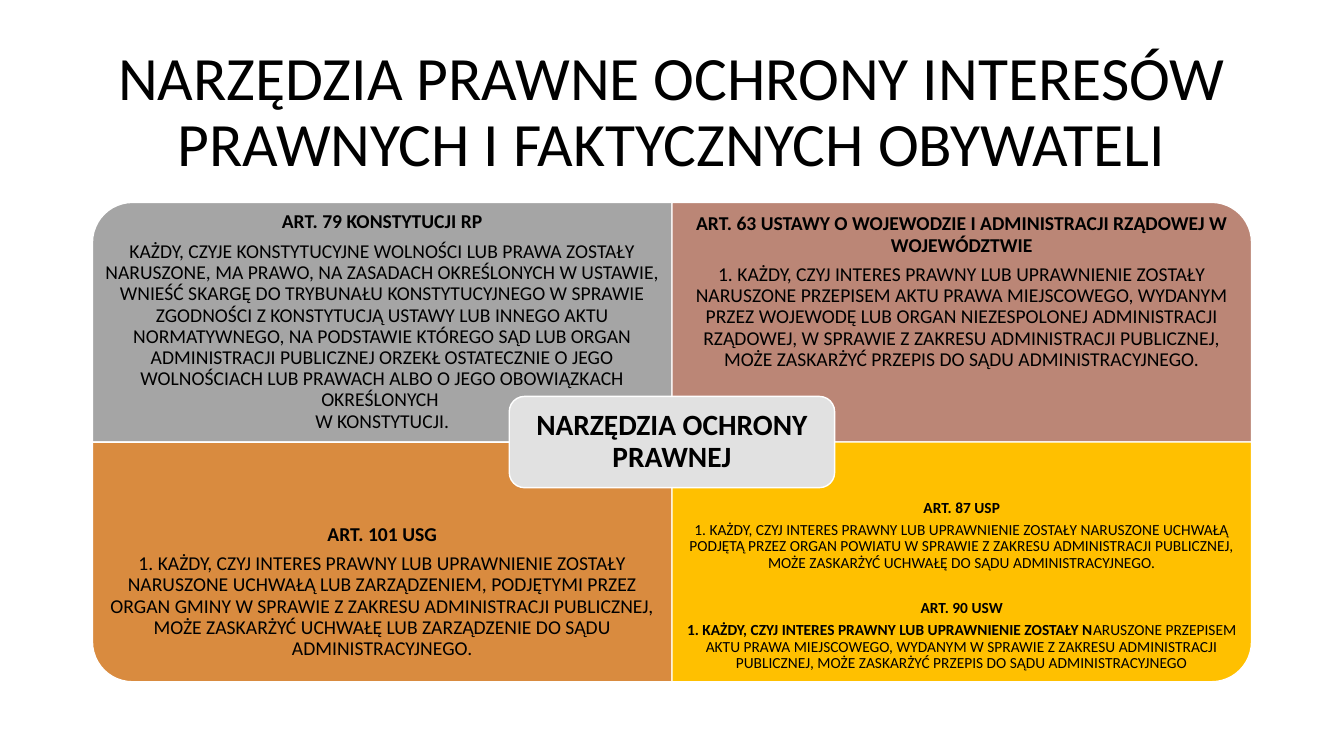
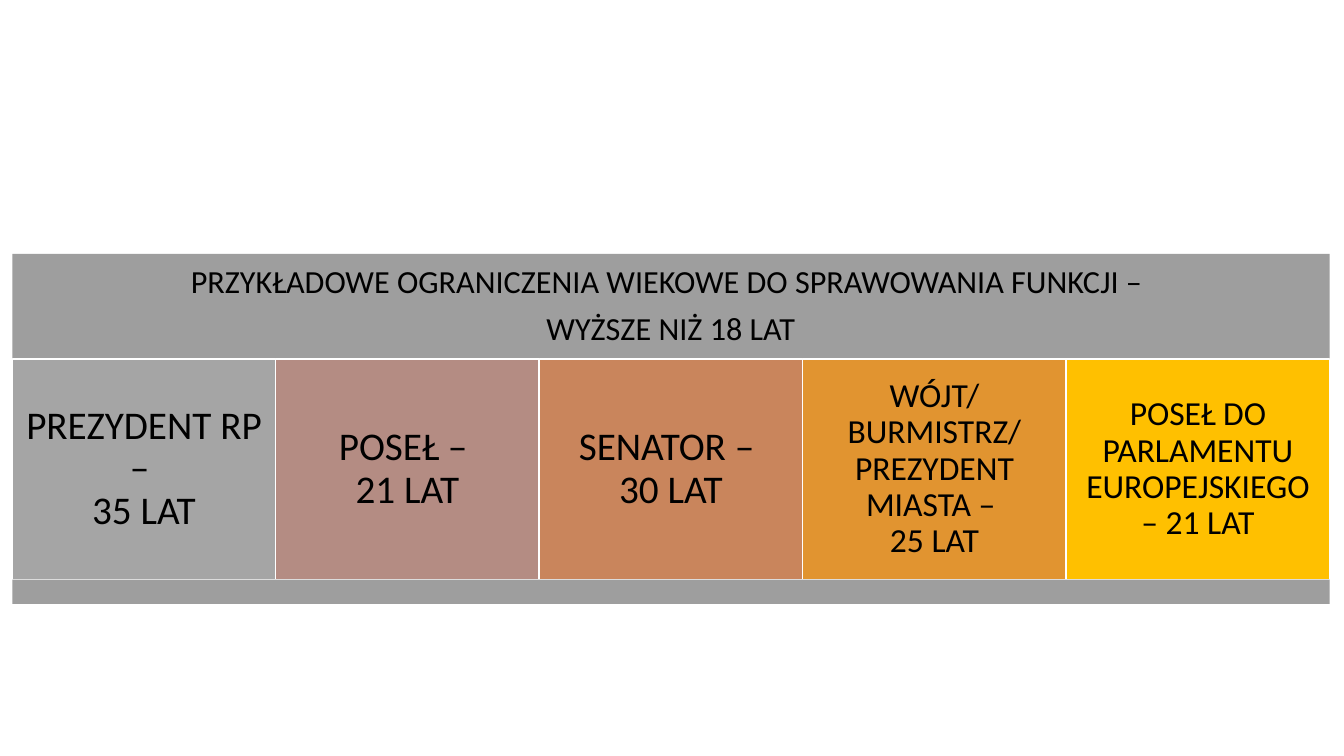
from pptx import Presentation
from pptx.dml.color import RGBColor
from pptx.enum.shapes import MSO_SHAPE
from pptx.enum.text import MSO_ANCHOR, PP_ALIGN
from pptx.util import Cm, Pt

FONT = "Calibri"
COLORS = {
    "text": "000000", "line": "FFFFFF", "band": "9E9E9E", "hub": "E1E1E1",
    "gray": "A5A5A5", "rose": "BB8676", "orange": "D98B3F", "gold": "FFC000",
    "mauve": "B48C83", "copper": "C9855C", "amber": "E19430",
}

QUADRANTS = [
    ("gray", 270, 14, 1, [
        [("ART. 79 KONSTYTUCJI RP", True)],
        [("KAŻDY, CZYJE KONSTYTUCYJNE WOLNOŚCI LUB PRAWA ZOSTAŁY NARUSZONE, MA PRAWO, "
          "NA ZASADACH OKREŚLONYCH W USTAWIE, WNIEŚĆ SKARGĘ DO TRYBUNAŁU KONSTYTUCYJNEGO "
          "W SPRAWIE ZGODNOŚCI Z KONSTYTUCJĄ USTAWY LUB INNEGO AKTU NORMATYWNEGO, "
          "NA PODSTAWIE KTÓREGO SĄD LUB ORGAN ADMINISTRACJI PUBLICZNEJ ORZEKŁ OSTATECZNIE "
          "O JEGO WOLNOŚCIACH LUB PRAWACH ALBO O JEGO OBOWIĄZKACH OKREŚLONYCH \v"
          "W KONSTYTUCJI.", False)],
    ]),
    ("rose", 0, 14, 0.75, [
        [("ART. 63 USTAWY O WOJEWODZIE I ADMINISTRACJI RZĄDOWEJ W WOJEWÓDZTWIE", True)],
        [("1. KAŻDY, CZYJ INTERES PRAWNY LUB UPRAWNIENIE ZOSTAŁY NARUSZONE PRZEPISEM AKTU "
          "PRAWA MIEJSCOWEGO, WYDANYM PRZEZ WOJEWODĘ LUB ORGAN NIEZESPOLONEJ ADMINISTRACJI "
          "RZĄDOWEJ, W SPRAWIE Z ZAKRESU ADMINISTRACJI PUBLICZNEJ, MOŻE ZASKARŻYĆ PRZEPIS "
          "DO SĄDU ADMINISTRACYJNEGO.", False)],
    ]),
    ("orange", 180, 14, 0.75, [
        [("ART. 101 USG", True)],
        [("1. KAŻDY, CZYJ INTERES PRAWNY LUB UPRAWNIENIE ZOSTAŁY NARUSZONE UCHWAŁĄ LUB "
          "ZARZĄDZENIEM, PODJĘTYMI PRZEZ ORGAN GMINY W SPRAWIE Z ZAKRESU ADMINISTRACJI "
          "PUBLICZNEJ, MOŻE ZASKARŻYĆ UCHWAŁĘ LUB ZARZĄDZENIE DO SĄDU "
          "ADMINISTRACYJNEGO.", False)],
    ]),
    ("gold", 90, 11, 0.7, [
        [("ART. 87 USP", True)],
        [("1. KAŻDY, CZYJ INTERES PRAWNY LUB UPRAWNIENIE ZOSTAŁY NARUSZONE UCHWAŁĄ PODJĘTĄ "
          "PRZEZ ORGAN POWIATU W SPRAWIE Z ZAKRESU ADMINISTRACJI PUBLICZNEJ, MOŻE ZASKARŻYĆ "
          "UCHWAŁĘ DO SĄDU ADMINISTRACYJNEGO.", False)],
        [("ART. 90 USW", True)],
        [("1. KAŻDY, CZYJ INTERES PRAWNY LUB UPRAWNIENIE ZOSTAŁY N", True),
         ("ARUSZONE PRZEPISEM AKTU PRAWA MIEJSCOWEGO, WYDANYM W SPRAWIE Z ZAKRESU "
          "ADMINISTRACJI PUBLICZNEJ, MOŻE ZASKARŻYĆ PRZEPIS DO SĄDU ADMINISTRACYJNEGO", False)],
    ]),
]

AGE_LIMITS = [
    ("gray", 28, "PREZYDENT RP – \v35 LAT"),
    ("mauve", 28, "POSEŁ – \v21 LAT"),
    ("copper", 28, "SENATOR – \v30 LAT"),
    ("amber", 24, "WÓJT/ BURMISTRZ/ PREZYDENT MIASTA – \v25 LAT"),
    ("gold", 24, "POSEŁ DO PARLAMENTU EUROPEJSKIEGO – 21 LAT"),
]


def rgb(name):
    """Return the named colour."""
    return RGBColor.from_string(COLORS[name])


def add_block(s, kind, box, fill, line=True, rotation=0):
    """Add a filled shape whose box is given as it shows after rotation."""
    x, y, w, h = box
    if rotation in (90, 270):
        x, y, w, h = x + (w - h) / 2, y + (h - w) / 2, h, w
    sp = s.shapes.add_shape(kind, Cm(x), Cm(y), Cm(w), Cm(h))
    sp.rotation = rotation
    sp.shadow.inherit = False
    sp.fill.solid()
    sp.fill.fore_color.rgb = rgb(fill)
    if line:
        sp.line.color.rgb = rgb("line")
        sp.line.width = Pt(1)
    else:
        sp.line.fill.background()
    return sp


def add_textbox(s, box):
    """Add an empty text box."""
    return s.shapes.add_textbox(*(Cm(v) for v in box))


def write(sp, paragraphs, size, inset=0.25):
    """Write centred paragraphs, each a list of (text, bold) runs."""
    tf = sp.text_frame
    tf.word_wrap = True
    tf.vertical_anchor = MSO_ANCHOR.MIDDLE
    tf.margin_left = tf.margin_right = tf.margin_top = tf.margin_bottom = Cm(inset)
    for i, runs in enumerate(paragraphs):
        p = tf.paragraphs[0] if i == 0 else tf.add_paragraph()
        p.alignment = PP_ALIGN.CENTER
        p.line_spacing = 0.9
        p.space_after = Pt(round(size * 0.4))
        p.font.name, p.font.size = FONT, Pt(size)
        p.font.color.rgb = rgb("text")
        if len(runs) == 1:
            p.text, p.font.bold = runs[0]
        else:
            for text, bold in runs:
                r = p.add_run()
                r.text, r.font.bold = text, bold
    return tf


def add_title(s, box, text):
    """Add the slide title."""
    tf = write(add_textbox(s, box), [[(text, False)]], 44)
    tf.paragraphs[0].space_after = Pt(0)


def add_matrix(s, box, quadrants, hub):
    """Add four rounded quadrants around a central label."""
    x, y, w, h = box
    cw, ch = w / 2, h / 2
    for i, (fill, rotation, size, share, paragraphs) in enumerate(quadrants):
        row, col = divmod(i, 2)
        qx, qy = x + col * cw, y + row * ch
        add_block(s, MSO_SHAPE.ROUND_1_RECTANGLE, (qx, qy, cw, ch), fill, rotation=rotation)
        label = add_textbox(s, (qx, qy + row * ch / 4, cw, ch * share))
        tf = write(label, paragraphs, size, size * 0.02)
        for p in tf.paragraphs[2::2]:
            p.space_before = Pt(16)
    hw, hh = 8.2, 2.3
    sp = add_block(s, MSO_SHAPE.ROUNDED_RECTANGLE,
                   (x + cw - hw / 2, y + ch - hh / 2, hw, hh), "hub")
    write(sp, [[(hub, True)]], 21)


def add_age_table(s, box, heading, limits):
    """Add a heading band, a row of equal tiles and a closing band."""
    x, y, w, h = box
    head, foot = h * 0.3, h * 0.07
    sp = add_block(s, MSO_SHAPE.RECTANGLE, (x, y, w, head), "band", line=False)
    write(sp, [[(text, False)] for text in heading], 23)
    tw = w / len(limits)
    for i, (fill, size, text) in enumerate(limits):
        tile = (x + i * tw, y + head, tw, h - head - foot)
        sp = add_block(s, MSO_SHAPE.RECTANGLE, tile, fill)
        write(sp, [[(text, False)]], size, size * 0.01)
    add_block(s, MSO_SHAPE.RECTANGLE, (x, y + h - foot, w, foot), "band", line=False)


def main():
    """Build and save the presentation."""
    prs = Presentation()
    prs.slide_width, prs.slide_height = Cm(33.87), Cm(19.05)
    blank = prs.slide_layouts[6]

    s = prs.slides.add_slide(blank)
    add_title(s, (2.33, 1.02, 29.21, 3.68),
              "NARZĘDZIA PRAWNE OCHRONY INTERESÓW PRAWNYCH I FAKTYCZNYCH OBYWATELI")
    add_matrix(s, (2.33, 5.1, 29.21, 12.08), QUADRANTS, "NARZĘDZIA OCHRONY PRAWNEJ")

    s = prs.slides.add_slide(blank)
    add_age_table(s, (0.31, 6.4, 33.2, 8.82),
                  ["PRZYKŁADOWE OGRANICZENIA WIEKOWE DO SPRAWOWANIA FUNKCJI – ",
                   "WYŻSZE NIŻ 18 LAT"], AGE_LIMITS)
    prs.save("out.pptx")


if __name__ == "__main__":
    main()
